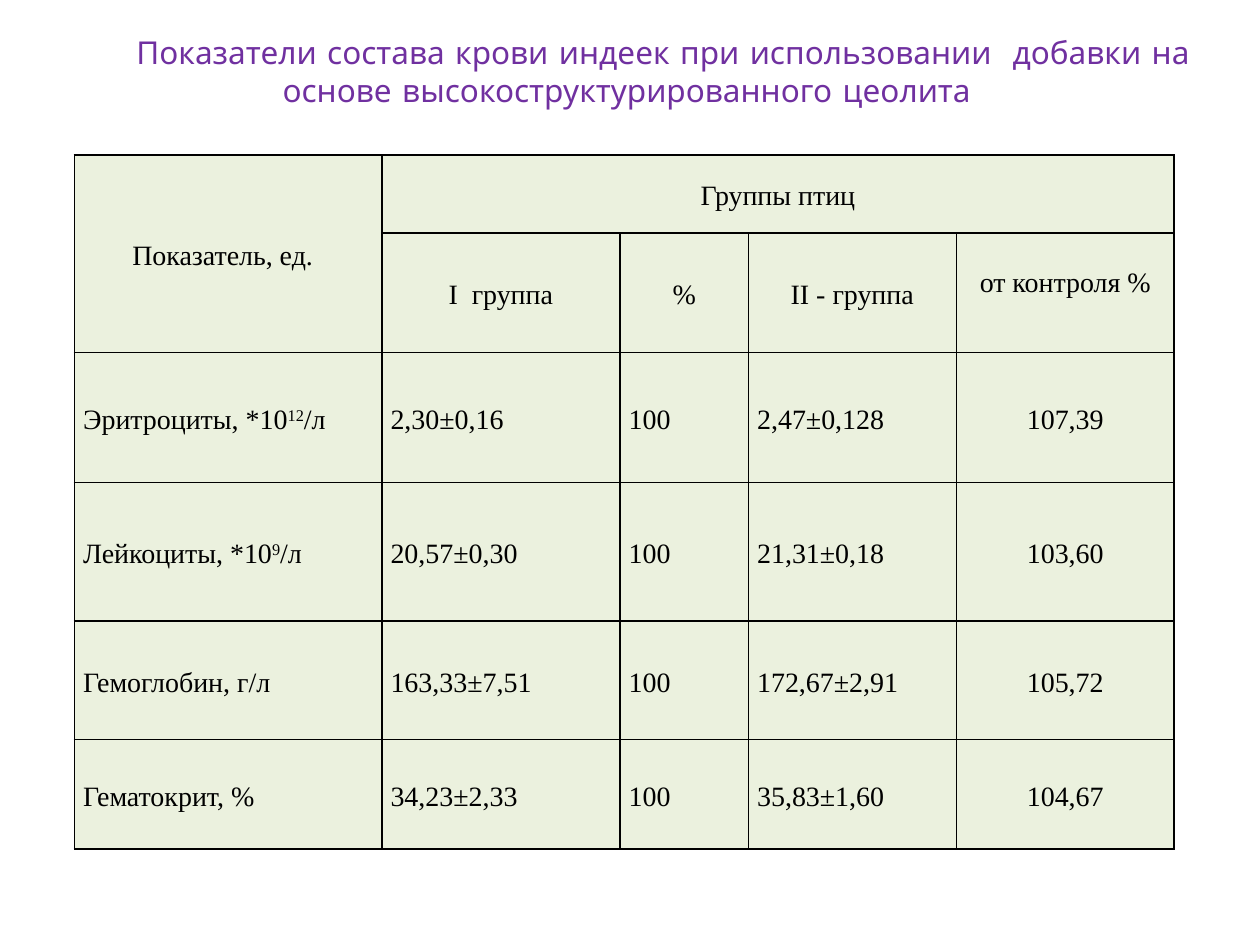
from dataclasses import dataclass

from lxml import etree
from pptx import Presentation
from pptx.dml.color import RGBColor
from pptx.enum.text import MSO_ANCHOR, MSO_AUTO_SIZE, PP_ALIGN
from pptx.oxml.ns import qn
from pptx.util import Inches, Pt

CENTER, JUSTIFY = PP_ALIGN.CENTER, PP_ALIGN.JUSTIFY
MIDDLE, TOP = MSO_ANCHOR.MIDDLE, MSO_ANCHOR.TOP
NO_AUTOFIT = MSO_AUTO_SIZE.NONE
TITLE_ONLY = 5


@dataclass(frozen=True)
class Theme:
    title_font: str = "Comic Neue"
    title_size: int = 18
    title_color: str = "7030A0"
    table_font: str = "Times New Roman"
    table_size: int = 16
    table_color: str = "000000"
    cell_fill: str = "EBF1DE"
    border_color: str = "000000"
    border_width: int = 1
    line_spacing: float = 1.15
    cell_margin: float = 0.07


class SlideBuilder:
    def __init__(self, slide, theme):
        self.slide = slide
        self.theme = theme

    def style_font(self, font, name, size, color):
        font.name = name
        font.size = Pt(size)
        font.color.rgb = RGBColor.from_string(color)

    def title(self, text, left, top, width, height, first_indent):
        heading = self.slide.shapes.title
        heading.left, heading.top = Inches(left), Inches(top)
        heading.width, heading.height = Inches(width), Inches(height)
        frame = heading.text_frame
        frame.text = text
        frame.word_wrap = True
        frame.auto_size = NO_AUTOFIT
        frame.vertical_anchor = TOP
        paragraph = frame.paragraphs[0]
        paragraph.alignment = CENTER
        paragraph._p.get_or_add_pPr().set("indent", str(Inches(first_indent)))
        self.style_font(paragraph.runs[0].font, self.theme.title_font,
                        self.theme.title_size, self.theme.title_color)

    def table(self, left, top, col_widths, row_heights):
        table = self.slide.shapes.add_table(
            len(row_heights), len(col_widths), Inches(left), Inches(top),
            Inches(sum(col_widths)), Inches(sum(row_heights))).table
        table.first_row = table.horz_banding = False
        for column, width in zip(table.columns, col_widths):
            column.width = Inches(width)
        for row, height in zip(table.rows, row_heights):
            row.height = Inches(height)
        for cell in table.iter_cells():
            self.borders(cell)
            cell.fill.solid()
            cell.fill.fore_color.rgb = RGBColor.from_string(self.theme.cell_fill)
        return table

    def borders(self, cell):
        properties = cell._tc.get_or_add_tcPr()
        for side in ("a:lnL", "a:lnR", "a:lnT", "a:lnB"):
            line = etree.SubElement(properties, qn(side),
                                    w=str(Pt(self.theme.border_width)))
            fill = etree.SubElement(line, qn("a:solidFill"))
            etree.SubElement(fill, qn("a:srgbClr"), val=self.theme.border_color)

    def cell(self, cell, text, alignment, indent=0, top=None):
        """Fill a cell; text between carets is raised."""
        cell.margin_left = cell.margin_right = Inches(self.theme.cell_margin)
        cell.margin_top, cell.margin_bottom = Inches(top or 0), 0
        cell.vertical_anchor = MIDDLE if top is None else TOP
        paragraph = cell.text_frame.paragraphs[0]
        paragraph.alignment = alignment
        paragraph.line_spacing = self.theme.line_spacing
        if indent:
            paragraph._p.get_or_add_pPr().set("indent", str(Inches(indent)))
        for index, part in enumerate(text.split("^")):
            run = paragraph.add_run()
            run.text = part
            self.style_font(run.font, self.theme.table_font,
                            self.theme.table_size, self.theme.table_color)
            if index % 2:
                run._r.get_or_add_rPr().set("baseline", "30000")


GROUP_HEADERS = ["I  группа", "%", "II - группа"]
BLOOD_VALUES = [
    ["Эритроциты, *10^12^/л", "2,30±0,16", "100", "2,47±0,128", "107,39"],
    ["Лейкоциты, *10^9^/л", "20,57±0,30", "100", "21,31±0,18", "103,60"],
    ["Гемоглобин, г/л", "163,33±7,51", "100", "172,67±2,91", "105,72"],
    ["Гематокрит, %", "34,23±2,33", "100", "35,83±1,60", "104,67"],
]


def main():
    presentation = Presentation()
    presentation.slide_width, presentation.slide_height = Inches(10), Inches(7.5)
    slide = presentation.slides.add_slide(presentation.slide_layouts[TITLE_ONLY])
    builder = SlideBuilder(slide, Theme())

    # Title
    builder.title("Показатели состава крови индеек при использовании  добавки "
                  "на основе высокоструктурированного цеолита",
                  0.35, 0.21, 9.25, 0.71, first_indent=0.58)

    # Table grid
    blood = builder.table(0.59, 1.23, [2.44, 1.89, 1.02, 1.65, 1.73],
                          [0.62, 0.95, 1.03, 1.1, 0.94, 0.87])

    # Two-level header
    blood.cell(0, 0).merge(blood.cell(1, 0))
    blood.cell(0, 1).merge(blood.cell(0, 4))
    builder.cell(blood.cell(0, 0), "Показатель, ед.", JUSTIFY, indent=0.39)
    builder.cell(blood.cell(0, 1), "Группы птиц", CENTER)
    for column, header in enumerate(GROUP_HEADERS, start=1):
        builder.cell(blood.cell(1, column), header, CENTER)
    builder.cell(blood.cell(1, 4), "от контроля %", CENTER, top=0.24)

    # Blood values, with the share of control centred
    for row, values in enumerate(BLOOD_VALUES, start=2):
        for column, value in enumerate(values):
            alignment = CENTER if column == 4 else JUSTIFY
            builder.cell(blood.cell(row, column), value, alignment)

    presentation.save("out.pptx")


if __name__ == "__main__":
    main()
